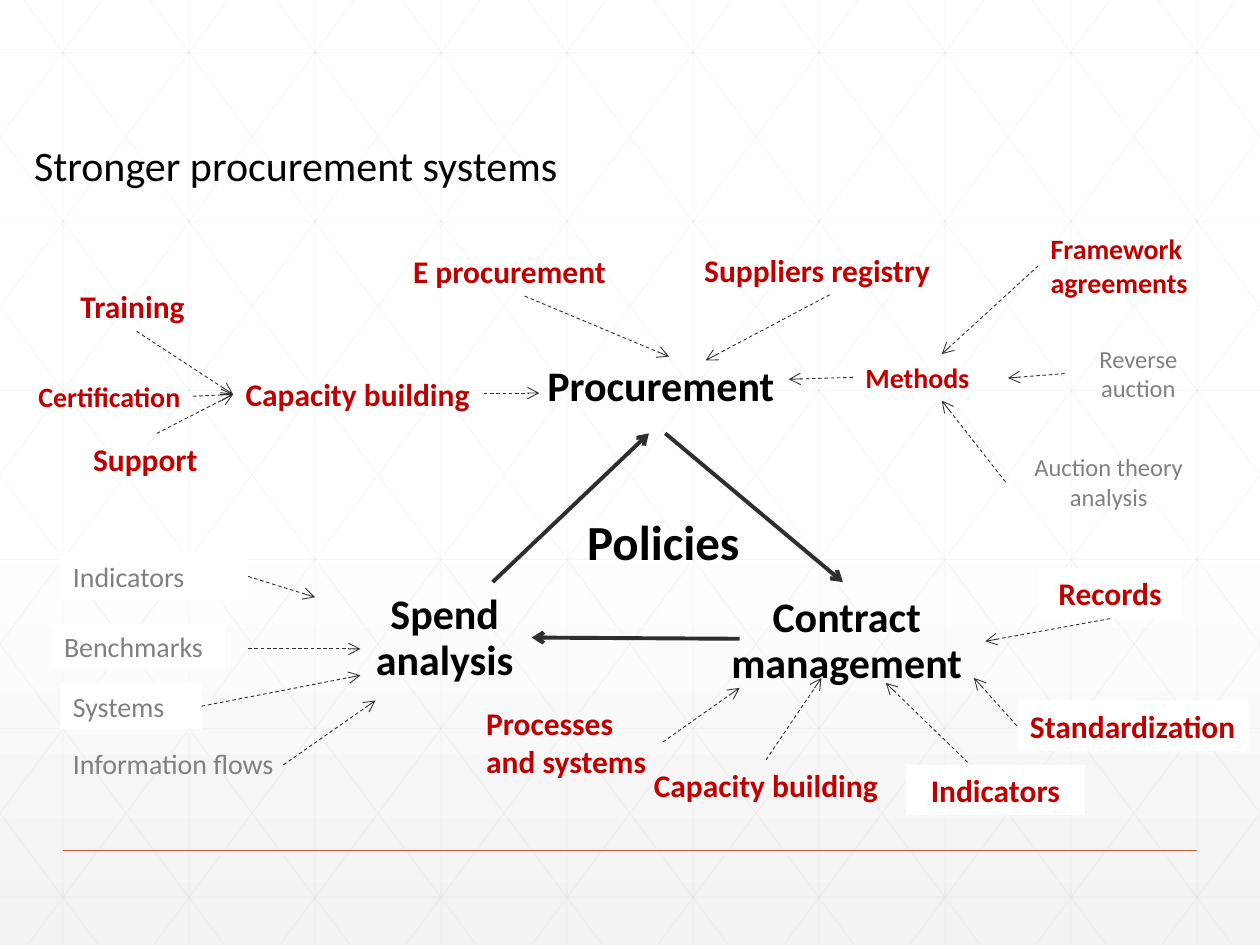
from dataclasses import dataclass

from pptx import Presentation
from pptx.dml.color import RGBColor
from pptx.enum.dml import MSO_LINE
from pptx.enum.shapes import MSO_CONNECTOR, MSO_SHAPE
from pptx.enum.text import MSO_ANCHOR, PP_ALIGN
from pptx.oxml import parse_xml
from pptx.oxml.ns import nsdecls
from pptx.oxml.xmlchemy import OxmlElement
from pptx.util import Pt

PX = 9144  # 100 px to the inch
WIDTH, HEIGHT = 1000, 750
TOP, LEFT, BOTTOM, RIGHT = range(4)


@dataclass(frozen=True)
class Theme:
    font: str = "Calibri"
    ink: str = "000000"
    strong: str = "C00000"
    muted: str = "808080"
    arrow: str = "2D2E2D"
    grid: str = "D9D9D9"
    rule: str = "D15A3E"
    paper: str = "FFFFFF"
    shade: str = "F2F2F2"
    huge: int = 28
    large: int = 24
    normal: int = 18
    small: int = 16
    tiny: int = 14


THEME = Theme()


def style(size, color, bold=True, align=PP_ALIGN.LEFT, plate=False, **frame):
    return {"font": {"name": THEME.font, "size": Pt(size), "bold": bold},
            "color": color, "align": align, "plate": plate, "frame": frame}


CENTER = PP_ALIGN.CENTER
SNUG = {f"margin_{side}": 5 * PX for side in ("left", "top", "right", "bottom")}
STYLES = {
    "title": style(THEME.large, THEME.ink, False, word_wrap=False,
                   vertical_anchor=MSO_ANCHOR.TOP),
    "core": style(THEME.large, THEME.ink, align=CENTER,
                  vertical_anchor=MSO_ANCHOR.MIDDLE, **SNUG),
    "center": style(THEME.huge, THEME.ink, align=CENTER),
    "strong": style(THEME.normal, THEME.strong),
    "strong small": style(THEME.small, THEME.strong),
    "strong right": style(THEME.small, THEME.strong, align=PP_ALIGN.RIGHT),
    "strong plate": style(THEME.normal, THEME.strong, align=CENTER, plate=True),
    "muted": style(THEME.small, THEME.muted, False),
    "muted center": style(THEME.tiny, THEME.muted, False, CENTER),
    "muted plate": style(THEME.small, THEME.muted, False, plate=True),
}


def px(*lengths):
    return [round(length * PX) for length in lengths]


def write(frame, text, look):
    for name, value in {"word_wrap": True, "vertical_anchor": MSO_ANCHOR.TOP,
                        **look["frame"]}.items():
        setattr(frame, name, value)
    paragraph = frame.paragraphs[0]
    paragraph.alignment = look["align"]
    paragraph.line_spacing = 0.9 if look is STYLES["core"] else 1.0
    run = paragraph.add_run()
    run.text = text
    for name, value in look["font"].items():
        setattr(run.font, name, value)
    run.font.color.rgb = RGBColor.from_string(look["color"])


def add_label(slide, text, look, box):
    if look["plate"]:
        label = slide.shapes.add_shape(MSO_SHAPE.RECTANGLE, *px(*box))
        label.shadow.inherit = False
        label.fill.solid()
        label.fill.fore_color.rgb = RGBColor.from_string(THEME.paper)
        label.line.fill.background()
    else:
        label = slide.shapes.add_textbox(*px(*box))
    write(label.text_frame, text, look)
    return label


def add_line(slide, start, end, color, width):
    line = slide.shapes.add_connector(MSO_CONNECTOR.STRAIGHT, *px(*start, *end))
    line.line.color.rgb = RGBColor.from_string(color)
    line.line.width = Pt(width)
    line._element.spPr.append(OxmlElement("a:effectLst"))
    return line


def add_arrow(slide, start, end, width, dashed):
    arrow = add_line(slide, start, end, THEME.arrow, width)
    if dashed:
        arrow.line.dash_style = MSO_LINE.DASH
    tip = OxmlElement("a:tailEnd")
    tip.set("type", "arrow")
    arrow.line._get_or_add_ln().append(tip)
    return arrow


def draw_cluster(slide, origin, labels, arrows, width=0.5, dashed=True):
    """Arrow ends are (x, y) points or (label text, side) joints."""
    left, top = origin
    placed = {text: add_label(slide, text, STYLES[look], (left + x, top + y, w, h))
              for text, look, (x, y, w, h) in labels}
    for ends in arrows:
        joints = [end if end[0] in placed else None for end in ends]
        points = [origin if joint else (left + end[0], top + end[1])
                  for end, joint in zip(ends, joints)]
        arrow = add_arrow(slide, *points, width, dashed)
        for joint, connect in zip(joints, (arrow.begin_connect, arrow.end_connect)):
            if joint:
                connect(placed[joint[0]], joint[1])


def draw_backdrop(slide):
    stops = ((0, THEME.paper), (53, THEME.paper), (100, THEME.shade))
    gradient = "".join(f'<a:gs pos="{at * 1000}"><a:srgbClr val="{color}"/></a:gs>'
                       for at, color in stops)
    slide._element.cSld.insert(0, parse_xml(
        f'<p:bg {nsdecls("p", "a")}><p:bgPr><a:gradFill rotWithShape="1">'
        f'<a:gsLst>{gradient}</a:gsLst><a:lin ang="5400000" scaled="0"/>'
        '</a:gradFill><a:effectLst/></p:bgPr></p:bg>'))

    lines = [((x, 0), (x, HEIGHT)) for x in range(50, WIDTH, 100)]
    lines += [((0, y), (WIDTH, y)) for y in range(42, HEIGHT, 134)]
    run = 559  # sideways travel of a diagonal over the full height
    for x in range(19 - 500, WIDTH, 100):
        first, last = max(x, 0), min(x + run, WIDTH)
        y1, y2 = ((edge - x) * HEIGHT / run for edge in (first, last))
        lines += [((first, y1), (last, y2)),
                  ((WIDTH - first, y1), (WIDTH - last, y2))]
    for start, end in lines:
        line = add_line(slide, start, end, THEME.grid, 0.5)
        alpha = OxmlElement("a:alpha")
        alpha.set("val", "25000")
        line.line._get_or_add_ln().find(".//{*}srgbClr").append(alpha)
    add_line(slide, (50, 675), (950, 675), THEME.rule, 1)


def draw_title(slide, box):
    title = slide.shapes.title
    title.left, title.top, title.width, title.height = px(*box)
    write(title.text_frame, "Stronger procurement systems", STYLES["title"])


CYCLE = (
    [("Procurement", "core", (178, 0, 193, 49)),
     ("Spend analysis", "core", (0, 191, 206, 66)),
     ("Contract management", "core", (321, 191, 202, 71)),
     ("Policies", "center", (196, 118, 161, 57))],
    [((278, 61), (419, 179)), ((141, 179), (265, 61)), ((337, 224), (172, 223))])

REGISTRIES = (
    [("E procurement", "strong", (0, 1, 197, 40)),
     ("Suppliers registry", "strong", (231, 0, 219, 40))],
    [(("E procurement", BOTTOM), (213, 89)),
     (("Suppliers registry", BOTTOM), (242, 92))])

METHODS = (
    [("Methods", "strong small", (51, 102, 141, 37)),
     ("Framework agreements", "strong small", (198, 0, 149, 64)),
     ("Reverse auction", "muted center", (219, 89, 117, 57)),
     ("Auction theory analysis", "muted center", (172, 175, 164, 57))],
    [(("Methods", LEFT), (0, 122)),
     (("Reverse auction", LEFT), (174, 121)),
     (("Framework agreements", LEFT), ("Methods", TOP)),
     (("Auction theory analysis", LEFT), ("Methods", BOTTOM))])

SPEND = (
    [("Indicators", "muted plate", (7, 0, 149, 37)),
     ("Information flows", "muted", (7, 149, 201, 37)),
     ("Benchmarks", "muted plate", (0, 56, 138, 37)),
     ("Systems", "muted plate", (7, 103, 112, 37))],
    [(("Indicators", RIGHT), (209, 35)), ((156, 76), (245, 76)),
     ((184, 168), (257, 117)), (("Systems", RIGHT), (245, 97))])

CAPACITY = (
    [("Capacity building", "strong", (168, 70, 205, 40)),
     ("Training", "strong", (37, 0, 109, 40)),
     ("Certification", "strong right", (0, 73, 136, 37)),
     ("Support", "strong", (47, 121, 121, 40))],
    [((source, side), ("Capacity building", LEFT)) for source, side in
     (("Support", TOP), ("Training", BOTTOM), ("Certification", RIGHT))]
    + [((367, 89), (411, 89))])

CONTRACT = (
    [("Records", "strong plate", (448, 0, 114, 40)),
     ("Indicators", "strong plate", (343, 156, 142, 40)),
     ("Standardization", "strong plate", (431, 105, 184, 40)),
     ("Capacity building", "strong", (133, 152, 198, 40)),
     ("Processes and systems", "strong", (0, 103, 159, 71))],
    [(("Records", BOTTOM), (406, 58)), ((392, 154), (327, 91)),
     (("Standardization", LEFT), (397, 87)),
     (("Capacity building", TOP), (276, 87)), ((150, 138), (211, 95))])


def main():
    deck = Presentation()
    deck.slide_width, deck.slide_height = px(WIDTH, HEIGHT)
    slide = deck.slides.add_slide(deck.slide_layouts[5])
    draw_backdrop(slide)
    for origin, cluster in (((318, 194), REGISTRIES), ((626, 179), METHODS),
                            ((41, 439), SPEND), ((17, 223), CAPACITY),
                            ((376, 451), CONTRACT)):
        draw_cluster(slide, origin, *cluster)
    draw_cluster(slide, (250, 283), *CYCLE, width=2.25, dashed=False)
    draw_title(slide, (17, 106, 439, 50))
    deck.save("out.pptx")


if __name__ == "__main__":
    main()
